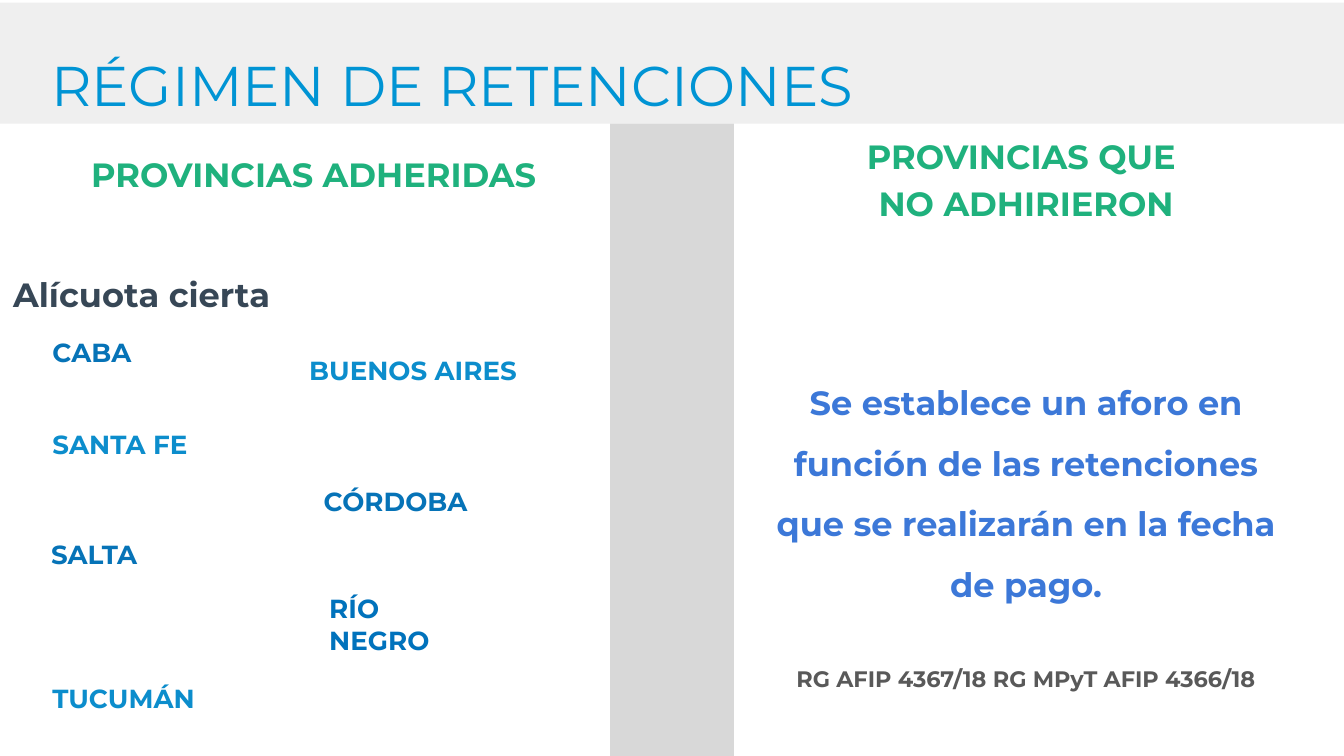
import pptx
import pptx.dml.color
import pptx.enum.shapes
import pptx.enum.text
import pptx.util

Inches = pptx.util.Inches
ALIGN = pptx.enum.text.PP_ALIGN
GREEN, NAVY, SKY = "1FB17D", "0673B7", "0C8DCC"
WIDTH = 10
HEIGHT = WIDTH * 9 / 16


def paint(color, value):
    color.rgb = pptx.dml.color.RGBColor.from_string(value)


def block(slide, box, fill):
    kind = pptx.enum.shapes.MSO_SHAPE.RECTANGLE
    shape = slide.shapes.add_shape(kind, *map(Inches, box))
    shape.shadow.inherit = False
    shape.fill.solid()
    paint(shape.fill.fore_color, fill)
    shape.line.fill.background()
    return shape


def setup(frame, side=0.1, top=0.05):
    """Fix the wrapping, anchor and insets of a text frame."""
    frame.word_wrap = True
    frame.auto_size = pptx.enum.text.MSO_AUTO_SIZE.NONE
    frame.vertical_anchor = pptx.enum.text.MSO_ANCHOR.TOP
    frame.margin_left = frame.margin_right = Inches(side)
    frame.margin_top, frame.margin_bottom = Inches(top), Inches(0.05)
    return frame


def frame_at(slide, box, **insets):
    return setup(slide.shapes.add_textbox(*map(Inches, box)).text_frame, **insets)


def write(frame, text, size=18, color=GREEN, bold=True, align=ALIGN.LEFT,
          line=1.0, before=0):
    """Fill the first paragraph, or add one if the frame has text."""
    para = frame.add_paragraph() if frame.text else frame.paragraphs[0]
    para.alignment = align
    para.line_spacing = line
    para.space_before = pptx.util.Pt(before)
    run = para.add_run()
    run.text = text
    run.font.name = "Montserrat"
    run.font.size = pptx.util.Pt(size)
    run.font.bold = bold
    paint(run.font.color, color)


def header(slide, box):
    left, top, width, height = box
    band = block(slide, box, "EFEFEF")
    title = slide.shapes.title
    title._element.addprevious(band._element)
    title.left, title.top = Inches(left + 0.28), Inches(top + 0.23)
    title.width, title.height = Inches(8.41), Inches(0.65)
    write(setup(title.text_frame), "RÉGIMEN DE RETENCIONES", size=30,
          color="0094D4", bold=False, align=ALIGN.JUSTIFY, line=1.15)


def joined(slide, box):
    """Provinces that joined, scattered in two loose columns."""
    left, top, width, height = box
    names = [
        ("CABA", 0.34, 1.3, 1.62, 0.7, 0.05, 0.28, NAVY),
        ("BUENOS AIRES", 2.25, 1.44, 1.68, 0.51, 0.05, 0.28, SKY),
        ("SANTA FE", 0.34, 2.22, 1.82, 0.59, 0.05, 0.05, SKY),
        ("CÓRDOBA", 2.31, 2.35, 1.64, 0.63, 0.1, 0.34, NAVY),
        ("SALTA", 0.33, 3.04, 1.64, 0.61, 0.05, 0.05, NAVY),
        ("TUCUMÁN", 0.34, 3.88, 1.2, 0.51, 0.05, 0.28, SKY),
        ("RÍO NEGRO", 2.4, 3.21, 1.24, 0.52, 0.05, 0.28, "0072BC"),
    ]
    for name, x, y, wide, high, side, inset, color in names:
        frame = frame_at(slide, (left + x, top + y, wide, high),
                         side=side, top=inset)
        write(frame, name, size=14, color=color)

    frame = frame_at(slide, (left, top + 0.08, width, 0.9), top=0.1)
    write(frame, "PROVINCIAS ADHERIDAS", align=ALIGN.CENTER, line=1.15)
    write(frame, "Alícuota cierta", color="374756", line=1.5, before=32)


def others(slide, box):
    """Provinces that did not join, with the rule that applies to them."""
    frame = frame_at(slide, box)
    mid = ALIGN.CENTER
    write(frame, "PROVINCIAS QUE ", align=mid, line=1.15)
    write(frame, "NO ADHIRIERON", align=mid, line=1.15)
    write(frame, "Se establece un aforo en función de las retenciones "
          "que se realizarán en la fecha de pago.",
          color="3C78D8", align=mid, line=1.5, before=74.5)
    write(frame, "RG AFIP 4367/18 RG MPyT AFIP 4366/18",
          size=12, color="595959", align=mid, before=32.5)


def main():
    deck = pptx.Presentation()
    deck.slide_width, deck.slide_height = Inches(WIDTH), Inches(HEIGHT)
    slide = deck.slides.add_slide(deck.slide_layouts[5])
    top = 0.92
    high = HEIGHT - top
    header(slide, (0, 0.02, WIDTH, 0.9))
    others(slide, (5.62, top, 4.03, high))
    block(slide, (4.54, top, 0.92, high), "D8D8D8")
    joined(slide, (0, top, 4.67, high))
    deck.save("out.pptx")


if __name__ == "__main__":
    main()
